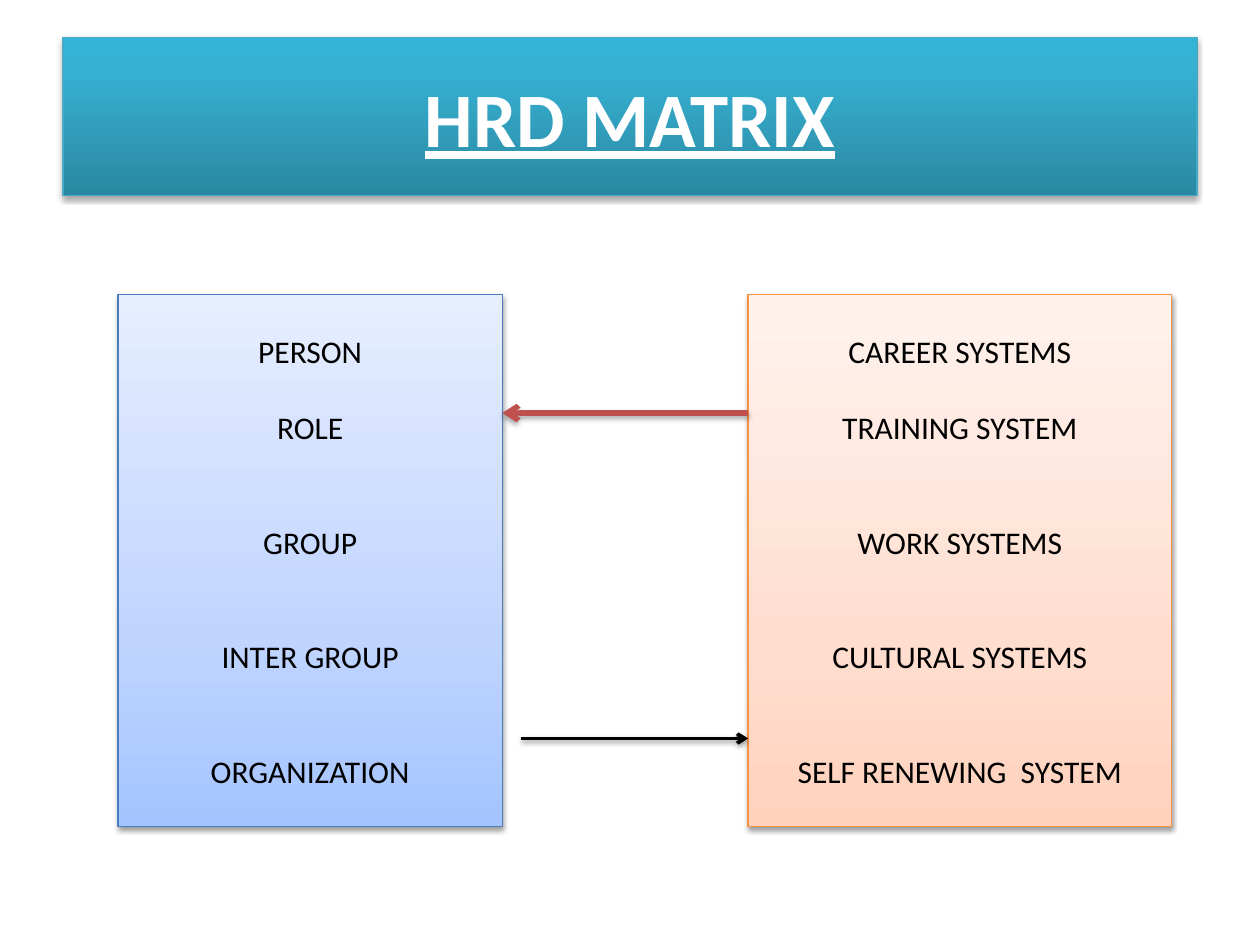
from dataclasses import dataclass

from lxml.etree import SubElement
from pptx import Presentation
from pptx.dml.color import RGBColor
from pptx.enum.shapes import MSO_CONNECTOR, MSO_SHAPE
from pptx.enum.text import MSO_ANCHOR, PP_ALIGN
from pptx.oxml.ns import qn
from pptx.util import Pt


@dataclass(frozen=True)
class Theme:
    font: str = "Calibri"
    title_size: float = 44
    body_size: float = 18
    blank_line: float = 22
    outline: float = 0.75
    white: str = "FFFFFF"
    black: str = "000000"
    red: str = "C0504D"
    teal_line: str = "46AAC5"
    blue_line: str = "4B7EBC"
    orange_line: str = "F69240"
    # Gradient stops run from the bottom edge to the top, in percent.
    teal: tuple = ((0, "2A88A2"), (80, "37B1D2"), (100, "34B4D6"))
    blue: tuple = ((0, "A4C4FF"), (35, "BFD4FF"), (100, "E6EEFF"))
    orange: tuple = ((0, "FFD2BD"), (35, "FFDED0"), (100, "FFF2ED"))
    strong_shadow: tuple = (1.6, 38)  # distance in points, opacity in percent
    soft_shadow: tuple = (1.8, 35)


def write_text(para, text, *, font, size, color, bold=False, underline=False, before=0):
    para.alignment = PP_ALIGN.CENTER
    para.space_before = Pt(before)
    span = para.add_run()
    span.text = text
    span.font.name = font
    span.font.size = Pt(size)
    span.font.bold = bold
    span.font.underline = underline
    span.font.color.rgb = RGBColor.from_string(color)


def add_color(parent, color):
    return SubElement(parent, qn("a:srgbClr"), val=color)


def add_shadow(effects, color, distance, opacity):
    """Put a downward shadow into an empty effect list."""
    shadow = SubElement(effects, qn("a:outerShdw"), blurRad=str(Pt(3.1)),
                        dist=str(Pt(distance)), dir="5400000", rotWithShape="0")
    SubElement(add_color(shadow, color), qn("a:alpha"), val=str(opacity * 1000))


class SlideBuilder:
    def __init__(self, slide, theme):
        self.slide = slide
        self.theme = theme

    def gradient_box(self, left, top, width, height, stops, outline, shadow):
        box = self.slide.shapes.add_shape(
            MSO_SHAPE.RECTANGLE, Pt(left), Pt(top), Pt(width), Pt(height))
        box.fill.gradient()
        box.fill.gradient_angle = 90
        properties = box._element.spPr
        stop_list = properties.find(".//" + qn("a:gsLst"))
        stop_list.clear()
        for position, color in stops:
            add_color(SubElement(stop_list, qn("a:gs"), pos=str(position * 1000)), color)
        box.line.color.rgb = RGBColor.from_string(outline)
        box.line.width = Pt(self.theme.outline)
        box.shadow.inherit = False
        add_shadow(properties.find(qn("a:effectLst")), self.theme.black, *shadow)
        box.text_frame.word_wrap = True
        box.text_frame.vertical_anchor = MSO_ANCHOR.MIDDLE
        return box

    def title(self, text, left, top, width, height):
        theme = self.theme
        box = self.gradient_box(left, top, width, height,
                                theme.teal, theme.teal_line, theme.soft_shadow)
        write_text(box.text_frame.paragraphs[0], text, font=theme.font,
                   size=theme.title_size, color=theme.white, bold=True, underline=True)

    def list_panel(self, items, left, top, width, height, stops, outline):
        """Draw a panel whose second item sits closer than the later ones."""
        theme = self.theme
        box = self.gradient_box(left, top, width, height,
                                stops, outline, theme.strong_shadow)
        frame = box.text_frame
        for index, item in enumerate(items):
            para = frame.add_paragraph() if index else frame.paragraphs[0]
            write_text(para, item, font=theme.font, size=theme.body_size,
                       color=theme.black, before=min(index, 2) * theme.blank_line)

    def arrow(self, start, end, y, color, weight, shadow):
        arrow = self.slide.shapes.add_connector(
            MSO_CONNECTOR.STRAIGHT, Pt(start), Pt(y), Pt(end), Pt(y))
        arrow.line.color.rgb = RGBColor.from_string(color)
        arrow.line.width = Pt(weight)
        properties = arrow._element.spPr
        SubElement(properties.find(qn("a:ln")), qn("a:tailEnd"), type="arrow")
        add_shadow(SubElement(properties, qn("a:effectLst")), self.theme.black, *shadow)


def main():
    deck = Presentation()
    deck.slide_width, deck.slide_height = Pt(720), Pt(540)
    theme = Theme()
    page = SlideBuilder(deck.slides.add_slide(deck.slide_layouts[6]), theme)

    page.title("HRD MATRIX", 36, 21.6, 648, 90)

    units_left, units_width, systems_left = 67.5, 219.5, 427.5
    panel_top, panel_height = 168.5, 304
    page.list_panel(
        ["PERSON", "ROLE", "GROUP", "INTER GROUP", "ORGANIZATION"],
        units_left, panel_top, units_width, panel_height, theme.blue, theme.blue_line)
    page.list_panel(
        ["CAREER SYSTEMS", "TRAINING SYSTEM", "WORK SYSTEMS",
         "CULTURAL SYSTEMS", "SELF RENEWING  SYSTEM"],
        systems_left, panel_top, 242, panel_height, theme.orange, theme.orange_line)

    page.arrow(298, systems_left, 422, theme.black, 2, theme.strong_shadow)
    page.arrow(systems_left, units_left + units_width, 236, theme.red, 3,
               theme.soft_shadow)

    deck.save("out.pptx")


if __name__ == "__main__":
    main()
